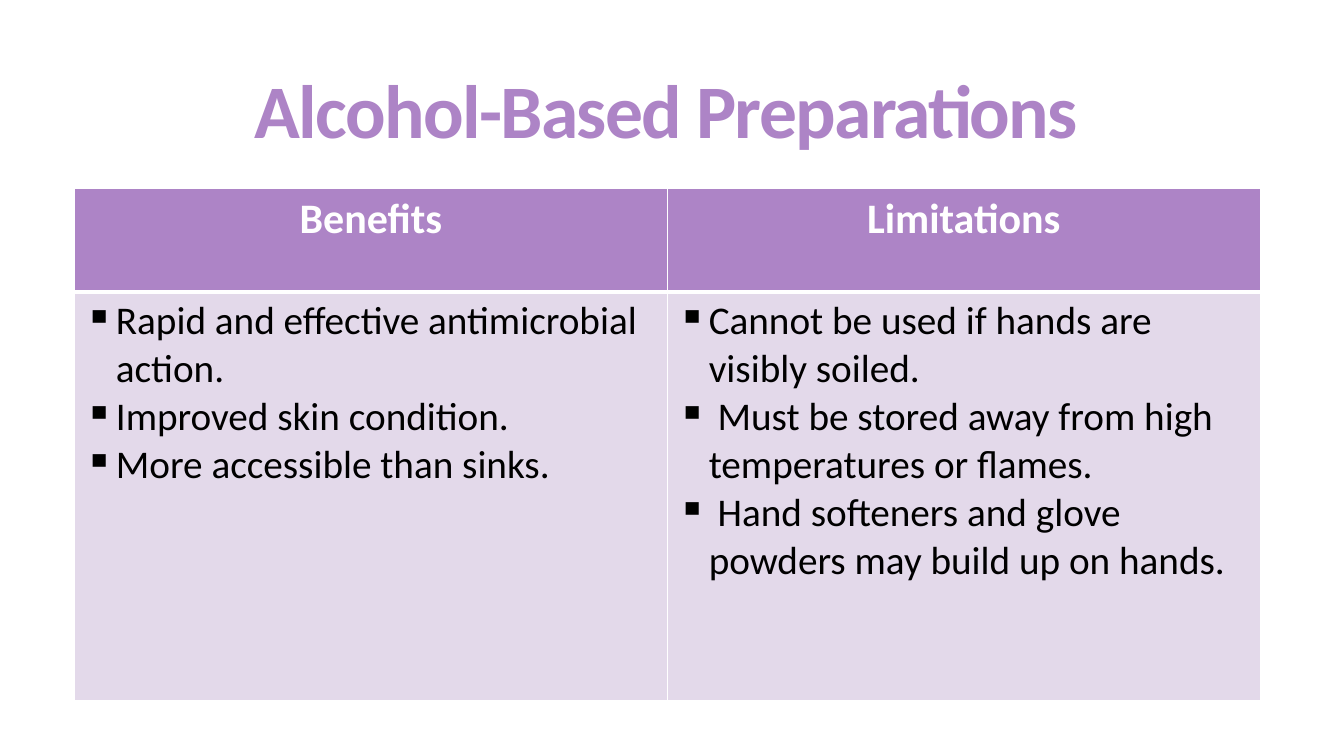
from lxml.etree import SubElement
from pptx import Presentation
from pptx.dml.color import RGBColor
from pptx.enum.text import MSO_ANCHOR, MSO_AUTO_SIZE, PP_ALIGN
from pptx.oxml import parse_xml
from pptx.oxml.ns import nsdecls, qn
from pptx.util import Inches, Pt

PURPLE = RGBColor(0xAD, 0x84, 0xC6)
LILAC = RGBColor(0xE3, 0xD9, 0xEA)
WHITE = RGBColor(0xFF, 0xFF, 0xFF)
BLACK = RGBColor(0, 0, 0)

COLUMNS = {
    "Benefits": [
        "Rapid and effective antimicrobial action.",
        "Improved skin condition.",
        "More accessible than sinks.",
    ],
    "Limitations": [
        "Cannot be used if hands are visibly soiled.",
        " Must be stored away from high temperatures or flames.",
        " Hand softeners and glove powders may build up on hands.",
    ],
}


def add_text(paragraph, text, size, color, bold):
    run = paragraph.add_run()
    run.text = text
    run.font.name = "Calibri"
    run.font.size = Pt(size)
    run.font.bold = bold
    run.font.color.rgb = color
    return run


def style_cell(cell, fill, top, bottom):
    cell.fill.solid()
    cell.fill.fore_color.rgb = fill
    borders = {"lnL": 1, "lnR": 1, "lnT": top, "lnB": bottom}
    for position, (side, width) in enumerate(borders.items()):
        border = parse_xml(
            f'<a:{side} {nsdecls("a")} w="{Pt(width)}"><a:solidFill>'
            f'<a:srgbClr val="{WHITE}"/></a:solidFill></a:{side}>'
        )
        cell._tc.get_or_add_tcPr().insert(position, border)


prs = Presentation()
prs.slide_width = Inches(13.33)
prs.slide_height = Inches(7.5)
slide = prs.slides.add_slide(prs.slide_layouts[5])

title = slide.shapes.title
title.left, title.top = Inches(0.72), Inches(0.29)
title.width, title.height = Inches(11.78), Inches(1.71)
title.text_frame.auto_size = MSO_AUTO_SIZE.NONE
title.text_frame.vertical_anchor = MSO_ANCHOR.MIDDLE
heading = title.text_frame.paragraphs[0]
heading.alignment = PP_ALIGN.CENTER
heading.line_spacing = 0.85
heading_run = add_text(heading, "Alcohol-Based Preparations", 54, PURPLE, True)
heading_run.font._element.set("spc", "-120")

comparison = slide.shapes.add_table(
    2, 2, Inches(0.74), Inches(1.87), Inches(11.76), Inches(5.08)
).table
comparison.rows[0].height = Inches(1.03)
comparison.rows[1].height = Inches(4.05)

for column, (label, points) in enumerate(COLUMNS.items()):
    comparison.columns[column].width = Inches(5.88)

    header = comparison.cell(0, column)
    style_cell(header, PURPLE, 1, 3)
    header_line = header.text_frame.paragraphs[0]
    header_line.alignment = PP_ALIGN.CENTER
    add_text(header_line, label, 30, WHITE, True)

    body = comparison.cell(1, column)
    style_cell(body, LILAC, 3, 1)
    for index, point in enumerate(points):
        frame = body.text_frame
        item = frame.add_paragraph() if index else frame.paragraphs[0]
        properties = item._p.get_or_add_pPr()
        properties.set("marL", str(Inches(0.31)))
        properties.set("indent", str(Inches(-0.31)))
        SubElement(properties, qn("a:buChar")).set("char", "▪")
        add_text(item, point, 28, BLACK, False)

prs.save("out.pptx")
